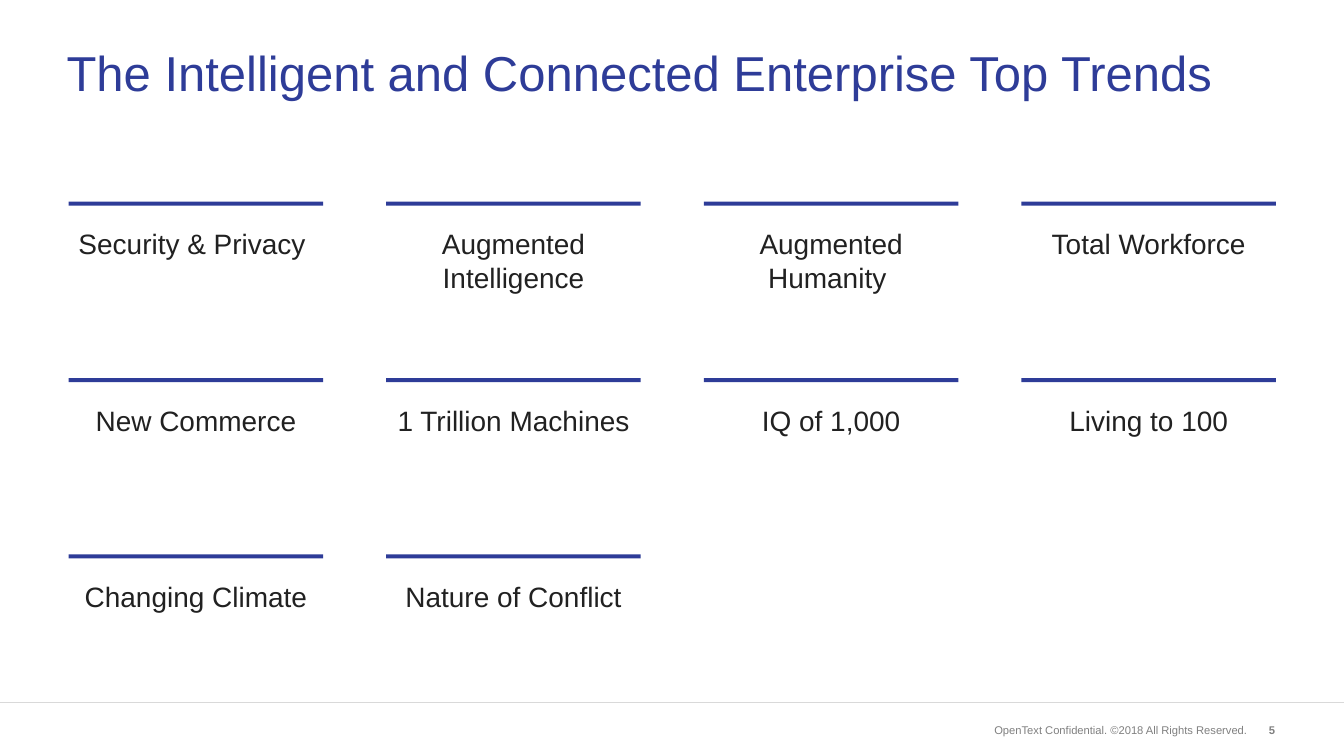
from lxml import etree
from pptx import Presentation
from pptx import util as u
from pptx.dml.color import RGBColor
from pptx.enum import shapes, text
from pptx.oxml.ns import qn

BLUE = RGBColor(0x2E, 0x3C, 0x98)
INK = RGBColor(0x21, 0x21, 0x21)
GREY = RGBColor(0x80, 0x80, 0x80)
RULE = RGBColor(0xD9, 0xD9, 0xD9)

TRENDS = [
    ["Security & Privacy ", "Augmented Intelligence", "Augmented Humanity ", "Total Workforce"],
    ["New Commerce", "1 Trillion Machines", "IQ of 1,000", "Living to 100"],
    ["Changing Climate", "Nature of Conflict"],
]
GRID_LEFT, GRID_TOP = 1.36, 4
COLUMN_STEP, ROW_STEP = 6.3, 3.5
CELL_WIDTH, BAR_HEIGHT = 5.05, 0.08


def write(frame, words, size, color, align=text.PP_ALIGN.LEFT, bold=False,
          anchor=text.MSO_ANCHOR.TOP, spacing=None, top_inset=0.05):
    """Put one formatted paragraph in a text frame."""
    frame.word_wrap = True
    frame.auto_size = text.MSO_AUTO_SIZE.NONE
    frame.vertical_anchor = anchor
    frame.margin_top = u.Inches(top_inset)
    para = frame.paragraphs[0]
    para.alignment = align
    if spacing:
        para.line_spacing = u.Pt(spacing)
    span = para.add_run()
    span.text = words
    span.font.name = "Arial"
    span.font.size = u.Pt(size)
    span.font.bold = bold
    span.font.color.rgb = color


def add_text(page, left, top, width, height, words, **style):
    box = page.shapes.add_textbox(*map(u.Inches, (left, top, width, height)))
    write(box.text_frame, words, **style)


def add_title(page, words):
    title = page.shapes.title
    title.left, title.top = u.Inches(1.22), u.Inches(0.38)
    title.width, title.height = u.Inches(24.08), u.Inches(2.13)
    write(title.text_frame, words, size=70, color=BLUE,
          anchor=text.MSO_ANCHOR.MIDDLE, spacing=80)


def add_bar(page, left, top):
    bar = page.shapes.add_shape(
        shapes.MSO_SHAPE.RECTANGLE,
        *map(u.Inches, (left, top, CELL_WIDTH, BAR_HEIGHT)))
    bar.shadow.inherit = False
    bar.fill.solid()
    bar.fill.fore_color.rgb = BLUE
    bar.line.fill.background()


def add_trend(page, left, top, words):
    """A blue bar with its label below."""
    add_bar(page, left, top)
    height = 1.45 if words.startswith("Augmented") else 0.77
    add_text(page, left, top + 0.4, CELL_WIDTH, height, words, size=40,
             color=INK, align=text.PP_ALIGN.CENTER, top_inset=0.1)


def add_footer(page):
    line = page.shapes.add_connector(
        shapes.MSO_CONNECTOR.STRAIGHT,
        *map(u.Inches, (0, 13.94, 26.66, 13.94)))
    line.line.color.rgb = RULE
    line.line.width = u.Pt(1)
    etree.SubElement(line._element.spPr, qn("a:effectLst"))
    add_text(page, 18.92, 14.29, 5.92, 0.37,
             "OpenText Confidential. ©2018 All Rights Reserved.", size=16,
             color=GREY, align=text.PP_ALIGN.RIGHT, anchor=text.MSO_ANCHOR.MIDDLE)
    add_text(page, 24.68, 14.3, 0.71, 0.37, "5", size=16, color=GREY,
             align=text.PP_ALIGN.RIGHT, bold=True)


def main():
    deck = Presentation()
    deck.slide_width, deck.slide_height = u.Inches(26.66), u.Inches(15)
    page = deck.slides.add_slide(deck.slide_layouts[5])  # Title Only

    add_title(page, "The Intelligent and Connected Enterprise Top Trends")

    # Grid of trends
    for row, labels in enumerate(TRENDS):
        for column, words in enumerate(labels):
            add_trend(page, GRID_LEFT + column * COLUMN_STEP,
                      GRID_TOP + row * ROW_STEP, words)

    add_footer(page)
    deck.save("out.pptx")


if __name__ == "__main__":
    main()
